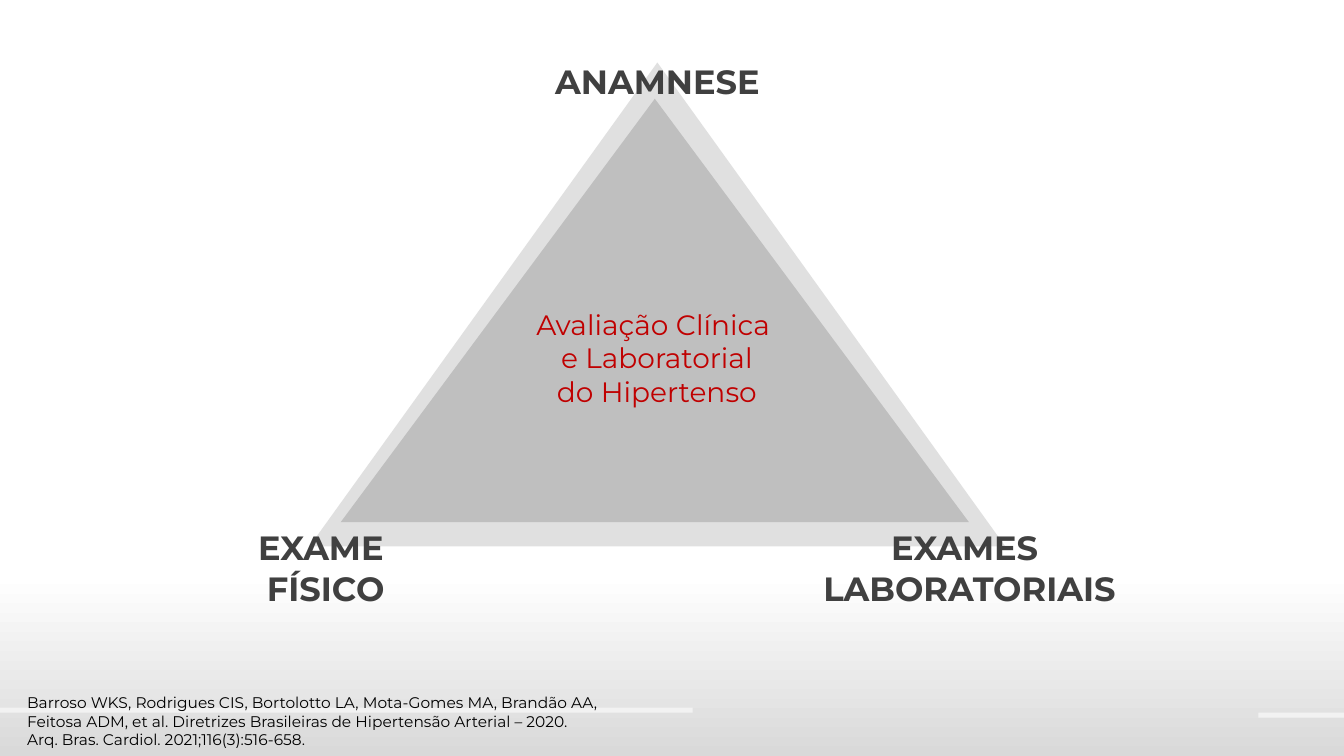
from lxml import etree
from pptx import Presentation
from pptx.dml.color import RGBColor
from pptx.enum.shapes import MSO_SHAPE
from pptx.enum.text import MSO_AUTO_SIZE, PP_ALIGN
from pptx.oxml.ns import qn
from pptx.util import Inches, Pt

TRIANGLE, RECTANGLE = MSO_SHAPE.ISOSCELES_TRIANGLE, MSO_SHAPE.RECTANGLE
LEFT, CENTER = PP_ALIGN.LEFT, PP_ALIGN.CENTER
FIT_TEXT = MSO_AUTO_SIZE.SHAPE_TO_FIT_TEXT
FONT = "Montserrat"
COLORS = {
    "white": "FFFFFF",
    "fade": "D9D9D9",
    "bar": "F2F2F2",
    "triangle": "BFBFBF",
    "corner": "404040",
    "theme": "C00000",
    "reference": "000000",
}


def rgb(name):
    """Return the named colour."""
    return RGBColor.from_string(COLORS[name])


def add_filled(slide, preset, box, color, opacity=None):
    """Add a borderless shape, optionally see-through (opacity in percent)."""
    shape = slide.shapes.add_shape(preset, *map(Inches, box))
    shape.shadow.inherit = False
    shape.fill.solid()
    shape.fill.fore_color.rgb = rgb(color)
    shape.line.fill.background()
    if opacity is not None:
        tint = shape.fill._xPr.find(qn("a:solidFill"))[0]
        etree.SubElement(tint, qn("a:alpha")).set("val", str(opacity * 1000))


def add_text(slide, box, lines, size, color, bold=False, align=CENTER, wrap=True):
    """Add a text box with one paragraph per line."""
    frame = slide.shapes.add_textbox(*map(Inches, box)).text_frame
    frame.word_wrap = wrap
    frame.auto_size = FIT_TEXT
    frame.text = "\n".join(lines)
    for paragraph in frame.paragraphs:
        paragraph.alignment = align
        font = paragraph.font
        font.name, font.size, font.bold = FONT, Pt(size), bold
        font.color.rgb = rgb(color)


def add_backdrop(slide, width, height):
    """Fade the background to grey and draw the two bars near the bottom."""
    fill = slide.background.fill
    fill.gradient()
    fill.gradient_angle = 270
    stops = zip(fill.gradient_stops, (0.76, 1), ("white", "fade"))
    for stop, position, color in stops:
        stop.position = position
        stop.color.rgb = rgb(color)
    add_filled(slide, RECTANGLE, (0, height - 0.48, 6.87, 0.05), "bar")
    add_filled(slide, RECTANGLE, (width - 0.85, height - 0.43, 0.85, 0.05), "bar")


def add_evaluation_triangle(slide, left, top, width, height):
    """Draw the double triangle with its theme and three corner labels."""
    inner = (left + 0.31, top + 0.36, width - 0.67, height - 0.6)
    add_filled(slide, TRIANGLE, inner, "triangle")
    add_filled(slide, TRIANGLE, (left, top, width, height), "triangle", opacity=48)

    base = top + height - 0.24
    corners = [
        ((left + 2.33, top - 0.06, 2.24, 0.5), ["ANAMNESE"], False),
        ((left - 1.41, base, 3.14, 0.91), ["EXAME ", "FÍSICO"], True),
        ((left + 4.99, base, 3.11, 0.91), ["EXAMES ", "LABORATORIAIS"], False),
    ]
    for box, lines, wrap in corners:
        add_text(slide, box, lines, 24, "corner", bold=True, wrap=wrap)

    theme = ["Avaliação Clínica ", "e Laboratorial", "do Hipertenso"]
    add_text(slide, (left + 1.3, top + 2.38, 4.29, 1.11), theme, 20, "theme")


def add_reference(slide, left, top, width, height):
    """Place the citation at the foot of the slide."""
    citation = [
        "Barroso WKS, Rodrigues CIS, Bortolotto LA, Mota-Gomes MA, Brandão AA, "
        "Feitosa ADM, et al. Diretrizes Brasileiras de Hipertensão Arterial – 2020.",
        "Arq. Bras. Cardiol. 2021;116(3):516-658.",
    ]
    add_text(slide, (left, top, width, height), citation, 11, "reference", align=LEFT)


def main():
    """Build and save the slide."""
    width, height = 13.33, 7.5
    deck = Presentation()
    deck.slide_width, deck.slide_height = Inches(width), Inches(height)
    slide = deck.slides.add_slide(deck.slide_layouts.get_by_name("Blank"))
    add_backdrop(slide, width, height)
    add_evaluation_triangle(slide, 3.07, 0.62, 6.9, 4.8)
    add_reference(slide, 0.17, 6.83, 6.24, 0.66)
    deck.save("out.pptx")


if __name__ == "__main__":
    main()
